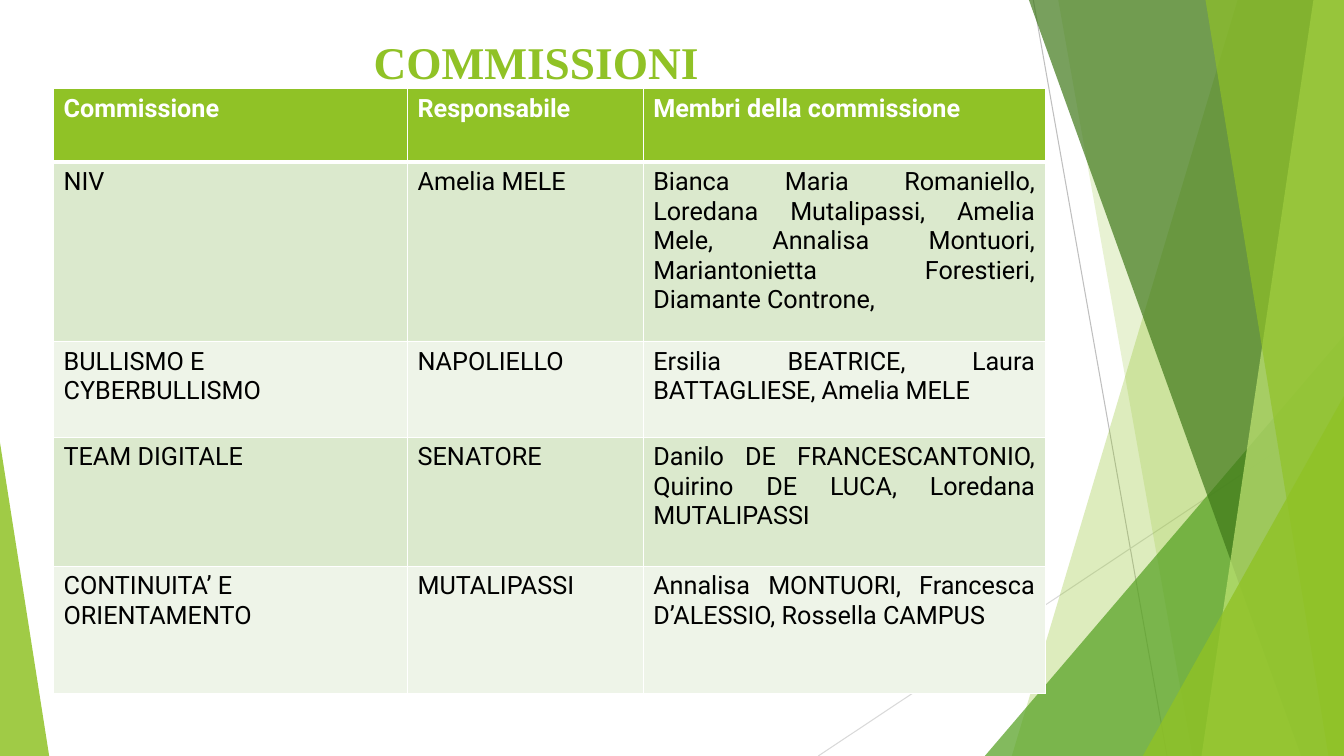
from dataclasses import dataclass

from lxml.etree import SubElement
from pptx import Presentation
from pptx.dml.color import RGBColor
from pptx.enum.shapes import MSO_CONNECTOR, MSO_SHAPE
from pptx.enum.text import MSO_ANCHOR, MSO_AUTO_SIZE, PP_ALIGN
from pptx.oxml.ns import qn
from pptx.util import Cm, Pt

SLIDE_W, SLIDE_H = 33.87, 19.05  # cm


@dataclass(frozen=True)
class Theme:
    accent: str = "90C226"
    leaf: str = "54A021"
    forest: str = "3F7819"
    lime: str = "C0E474"
    band_dark: str = "DBE9CD"
    band_light: str = "EEF4E8"
    white: str = "FFFFFF"
    black: str = "000000"
    title_font: str = "Times New Roman"
    table_font: str = "Roboto"
    title_size: float = 32.4
    table_size: float = 18


@dataclass(frozen=True)
class Ray:
    start: tuple[float, float]
    end: tuple[float, float]
    color: str


@dataclass(frozen=True)
class Blade:
    """Band from a slanted left edge to the right side of the slide."""
    top_x: float
    bottom_x: float
    color: str
    opacity: int


@dataclass(frozen=True)
class Wedge:
    """Triangle standing on the bottom of the slide."""
    left: float
    top: float
    width: float
    apex: float
    color: str
    opacity: int


@dataclass(frozen=True)
class Committee:
    name: str
    lead: str
    members: str
    height: float


THEME = Theme()
RAYS = [
    Ray((26.04, 0), (29.41, SLIDE_H), "BFBFBF"),
    Ray((SLIDE_W, 10.24), (20.62, SLIDE_H), "D9D9D9"),
]
FACETS = [
    Blade(31.19, 25.5, THEME.accent, 30),
    Blade(26.67, 30.05, THEME.accent, 20),
    Wedge(24.82, 8.46, 9.05, 1, THEME.leaf, 72),
    Blade(25.93, 32.79, THEME.forest, 70),
    Blade(33.1, 30.28, THEME.lime, 70),
    Blade(30.38, 33.48, THEME.accent, 65),
    Wedge(28.8, 9.98, 5.07, 1, THEME.accent, 80),
    Wedge(0, 11.15, 1.24, 0, THEME.accent, 85),
]
COLUMN_WIDTHS = [8.92, 5.94, 10.13]
ROWS = [
    Committee("Commissione", "Responsabile", "Membri della commissione", 1.85),
    Committee("NIV", "Amelia MELE",
              "Bianca Maria Romaniello, Loredana Mutalipassi, Amelia Mele, "
              "Annalisa Montuori, Mariantonietta Forestieri, Diamante Controne,", 4.52),
    Committee("BULLISMO E CYBERBULLISMO", "NAPOLIELLO",
              "Ersilia BEATRICE, Laura BATTAGLIESE, Amelia MELE", 2.41),
    Committee("TEAM DIGITALE", "SENATORE",
              "Danilo DE FRANCESCANTONIO, Quirino DE LUCA, Loredana MUTALIPASSI", 3.25),
    Committee("CONTINUITA’ E ORIENTAMENTO", "MUTALIPASSI",
              "Annalisa MONTUORI, Francesca D’ALESSIO, Rossella CAMPUS", 3.2),
]


def rgb(color: str) -> RGBColor:
    return RGBColor.from_string(color)


def add_run(paragraph, text: str, font: str, size: float, color: str, bold: bool) -> None:
    run = paragraph.add_run()
    run.text = text
    run.font.name = font
    run.font.size = Pt(size)
    run.font.bold = bold
    run.font.color.rgb = rgb(color)


def draw_ray(slide, ray: Ray) -> None:
    line = slide.shapes.add_connector(
        MSO_CONNECTOR.STRAIGHT, *map(Cm, ray.start), *map(Cm, ray.end))
    line.line.color.rgb = rgb(ray.color)
    line.line.width = Pt(0.75)
    SubElement(line._element.spPr, qn("a:effectLst"))


def draw_facet(slide, facet: Blade | Wedge) -> None:
    if isinstance(facet, Blade):
        outline = slide.shapes.build_freeform(Cm(facet.top_x), 0)
        corners = [(SLIDE_W, 0), (SLIDE_W, SLIDE_H), (facet.bottom_x, SLIDE_H)]
        outline.add_line_segments([(Cm(x), Cm(y)) for x, y in corners], close=True)
        shape = outline.convert_to_shape()
    else:
        shape = slide.shapes.add_shape(
            MSO_SHAPE.ISOSCELES_TRIANGLE, Cm(facet.left), Cm(facet.top),
            Cm(facet.width), Cm(SLIDE_H - facet.top))
        shape.adjustments[0] = facet.apex
    shape.shadow.inherit = False
    shape.line.fill.background()
    shape.fill.solid()
    shape.fill.fore_color.rgb = rgb(facet.color)
    color = shape._element.spPr.find(qn("a:solidFill")).find(qn("a:srgbClr"))
    SubElement(color, qn("a:alpha"), val=str(facet.opacity * 1000))


def set_title(slide, text: str) -> None:
    title = slide.shapes.title
    title.left, title.top, title.width, title.height = map(Cm, (1.57, 0.71, 23.88, 1.52))
    frame = title.text_frame
    frame.auto_size = MSO_AUTO_SIZE.NONE
    frame.vertical_anchor = MSO_ANCHOR.BOTTOM
    frame.margin_bottom = 0
    paragraph = frame.paragraphs[0]
    paragraph.alignment = PP_ALIGN.CENTER
    add_run(paragraph, text, THEME.title_font, THEME.title_size, THEME.accent, True)


def set_borders(cell, widths: dict[str, float]) -> None:
    properties = cell._tc.get_or_add_tcPr()
    for side, width in widths.items():
        border = SubElement(properties, qn(f"a:ln{side}"), w=str(Pt(width)))
        fill = SubElement(border, qn("a:solidFill"))
        SubElement(fill, qn("a:srgbClr"), val=THEME.white)


def draw_table(slide, rows: list[Committee]) -> None:
    table = slide.shapes.add_table(
        len(rows), len(COLUMN_WIDTHS), Cm(1.35), Cm(2.24),
        Cm(sum(COLUMN_WIDTHS)), Cm(sum(row.height for row in rows))).table
    table.horz_banding = False
    for column, width in zip(table.columns, COLUMN_WIDTHS):
        column.width = Cm(width)
    for r, row in enumerate(rows):
        table.rows[r].height = Cm(row.height)
        header = r == 0
        band = THEME.band_dark if r % 2 else THEME.band_light
        for c, text in enumerate((row.name, row.lead, row.members)):
            cell = table.cell(r, c)
            set_borders(cell, {"L": 1, "R": 1, "T": 3 if r == 1 else 1, "B": 3 if header else 1})
            cell.fill.solid()
            cell.fill.fore_color.rgb = rgb(THEME.accent if header else band)
            paragraph = cell.text_frame.paragraphs[0]
            if c == 2 and not header:
                paragraph.alignment = PP_ALIGN.JUSTIFY
            add_run(paragraph, text, THEME.table_font, THEME.table_size,
                    THEME.white if header else THEME.black, header)


def main() -> None:
    deck = Presentation()
    deck.slide_width, deck.slide_height = Cm(SLIDE_W), Cm(SLIDE_H)
    slide = deck.slides.add_slide(deck.slide_layouts[5])  # Title Only

    # Green backdrop
    for ray in RAYS:
        draw_ray(slide, ray)
    for facet in FACETS:
        draw_facet(slide, facet)

    # Title and committees
    set_title(slide, "COMMISSIONI")
    draw_table(slide, ROWS)
    deck.save("out.pptx")


if __name__ == "__main__":
    main()
